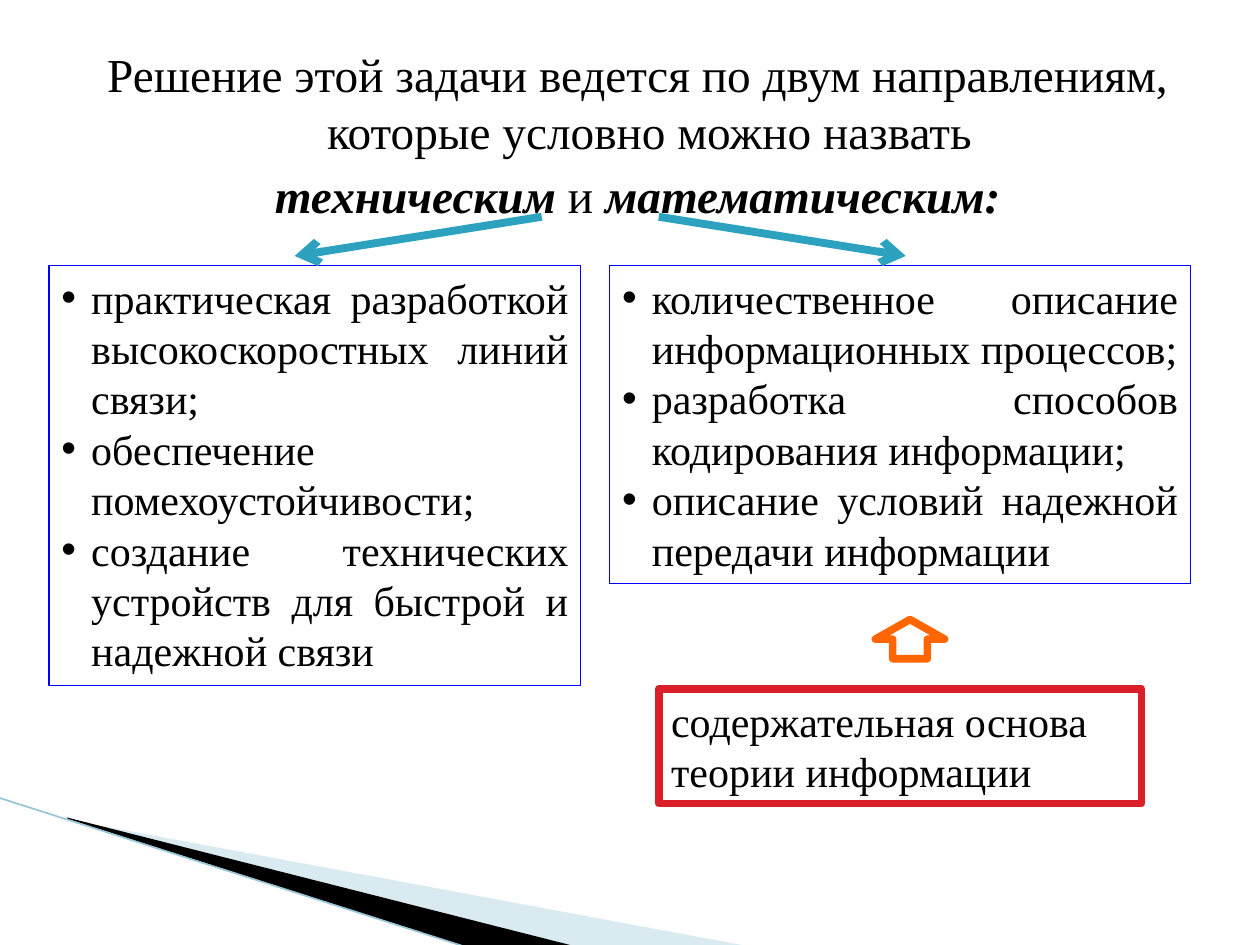
from dataclasses import dataclass

from lxml.etree import SubElement
from pptx import Presentation
from pptx.dml.color import RGBColor
from pptx.enum.shapes import MSO_CONNECTOR as CONN, MSO_SHAPE as SHAPE
from pptx.enum.text import MSO_ANCHOR as ANCHOR, MSO_AUTO_SIZE as FIT, PP_ALIGN as ALIGN
from pptx.oxml.ns import qn
from pptx.util import Cm, Pt


@dataclass(frozen=True)
class Theme:
    """Colours, font and type sizes of the slide."""
    font: str = "Times New Roman"
    title: int = 27
    body: int = 24
    ink: str = "000000"
    paper: str = "FFFFFF"
    frame: str = "0000FF"
    accent: str = "DA1F28"
    pointer: str = "FF6600"
    branch: str = "2DA2BF"
    wedge: str = "A0CBDC"
    edge: str = "97C5D8"


T = Theme()


def rgb(value):
    """Turn a hex string into a colour."""
    return RGBColor.from_string(value)


def style(p, size, align):
    """Align a paragraph and format its runs."""
    p.alignment = align
    for r in p.runs:
        r.font.name, r.font.size = T.font, Pt(size)
        r.font.color.rgb = rgb(T.ink)


def add_outline(s, kind, box, color, width, fill=None):
    """Add an outlined preset shape, hollow unless a fill is given."""
    sp = s.shapes.add_shape(kind, *map(Cm, box))
    sp.shadow.inherit = False
    if fill:
        sp.fill.solid()
        sp.fill.fore_color.rgb = rgb(fill)
    else:
        sp.fill.background()
    sp.line.color.rgb, sp.line.width = rgb(color), Pt(width)
    return sp


def add_line(s, start, end, color, width, arrow=False):
    """Add a straight line, with an open arrowhead at its end if asked."""
    c = s.shapes.add_connector(CONN.STRAIGHT, *map(Cm, start + end))
    c.line.color.rgb, c.line.width = rgb(color), Pt(width)
    if arrow:
        SubElement(c.line._get_or_add_ln(), qn("a:tailEnd"), type="arrow")
    SubElement(c._element.spPr, qn("a:effectLst"))


def add_wedge(s, points, color, alpha=None):
    """Add a filled polygon without outline, optionally transparent."""
    (x, y), *rest = [(Cm(px), Cm(py)) for px, py in points]
    builder = s.shapes.build_freeform(x, y)
    builder.add_line_segments(rest, close=True)
    sp = builder.convert_to_shape()
    sp.shadow.inherit = False
    sp.fill.solid()
    sp.fill.fore_color.rgb = rgb(color)
    sp.line.fill.background()
    if alpha:
        clr = sp._element.spPr.find(".//" + qn("a:srgbClr"))
        SubElement(clr, qn("a:alpha"), val=str(alpha * 1000))


def add_corner(s, left, top):
    """Draw the decorative wedges from the left edge down to the bottom."""
    def at(points):
        return [(left + x, top + y) for x, y in points]

    add_wedge(s, at([(1.4, 0.45), (15.11, 3), (11.58, 3), (1.4, 0.43)]), T.wedge, 40)
    add_wedge(s, at([(1.35, 0.4), (11.61, 3), (9.45, 3.02), (1.37, 0.43)]), T.ink)
    add_line(s, (left - 0.03, top), (left + 9.42, top + 3.02), T.edge, 0.95)


def add_title(s, box):
    """Write the centred heading."""
    tf = s.shapes.add_textbox(*map(Cm, box)).text_frame
    tf.word_wrap = True
    lines = [
        [("Решение этой задачи ведется по двум направлениям, которые условно можно назвать ", False)],
        [("техническим", True), (" и ", False), ("математическим:", True)],
    ]
    for i, line in enumerate(lines):
        p = tf.add_paragraph() if i else tf.paragraphs[0]
        p._p.get_or_add_pPr().set("marL", str(Cm(1.02)))
        p._p.get_or_add_pPr().set("indent", str(Cm(-0.71)))
        for text, strong in line:
            r = p.add_run()
            r.text = text
            r.font.bold = r.font.italic = strong
        style(p, T.title, ALIGN.CENTER)
        p.space_before = Pt(4 if i else 0)


def add_text(sp, lines, align, bullets=False):
    """Fill a shape with top-anchored paragraphs."""
    tf = sp.text_frame
    tf.word_wrap, tf.auto_size, tf.vertical_anchor = True, FIT.SHAPE_TO_FIT_TEXT, ANCHOR.TOP
    tf.text = "\n".join(lines)
    for p in tf.paragraphs:
        if bullets:
            pPr = p._p.get_or_add_pPr()
            pPr.set("marL", str(Cm(0.6)))
            pPr.set("indent", str(Cm(-0.6)))
            SubElement(pPr, qn("a:buFont"), typeface="Arial")
            SubElement(pPr, qn("a:buChar"), char="•")
        style(p, T.body, align)


def add_direction(s, box, items):
    """Add a framed bullet list for one direction."""
    add_text(add_outline(s, SHAPE.RECTANGLE, box, T.frame, 0.75), items, ALIGN.JUSTIFY, True)


def add_basis(s, box):
    """Add the conclusion box and the block arrow above it."""
    left, top, width, _ = box
    sp = add_outline(s, SHAPE.RECTANGLE, box, T.accent, 4.33, T.paper)
    add_text(sp, ["содержательная основа теории информации"], ALIGN.LEFT)
    arrow = (left + width / 2 - 0.5, top - 1.4, 1.4, 0.79)
    add_outline(s, SHAPE.UP_ARROW, arrow, T.pointer, 4.33)


def add_branches(s, center, top):
    """Draw the two mirrored arrows from the heading to the lists."""
    for side in (-1, 1):
        add_line(s, (center + side * 1.18, top), (center + side * 6.16, top + 0.79),
                 T.branch, 4.5, arrow=True)


def main():
    """Build the slide and save it."""
    prs = Presentation()
    prs.slide_width, prs.slide_height = Cm(25.4), Cm(19.05)
    s = prs.slides.add_slide(prs.slide_layouts[6])
    add_corner(s, 0, 16.08)
    add_title(s, (1.27, 0.79, 22.86, 4.17))
    add_direction(s, (0.99, 5.36, 10.72, 8.46), [
        "практическая разработкой высокоскоростных линий связи; ",
        "обеспечение помехоустойчивости;",
        "создание технических устройств для быстрой и надежной связи",
    ])
    add_direction(s, (12.29, 5.36, 11.71, 6.4), [
        "количественное описание информационных процессов;",
        "разработка способов кодирования информации;",
        "описание условий надежной передачи информации",
    ])
    add_basis(s, (13.28, 13.89, 9.73, 2.31))
    add_branches(s, 12.1, 4.37)
    prs.save("out.pptx")


if __name__ == "__main__":
    main()
